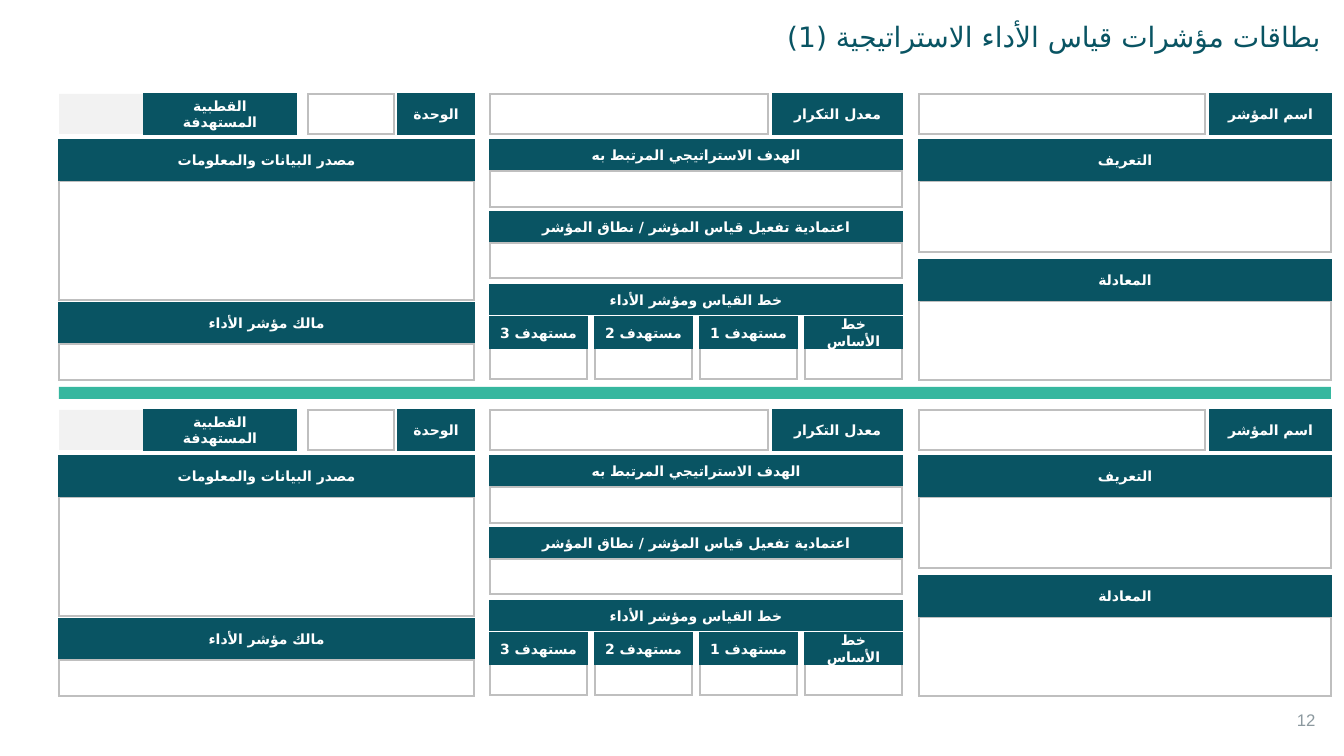
from lxml import etree
from pptx import Presentation
from pptx.dml.color import RGBColor
from pptx.enum.shapes import MSO_SHAPE
from pptx.enum.text import MSO_ANCHOR, PP_ALIGN
from pptx.oxml.ns import qn
from pptx.util import Pt

RECT = MSO_SHAPE.RECTANGLE
TOP, MIDDLE = MSO_ANCHOR.TOP, MSO_ANCHOR.MIDDLE
LEFT, CENTER, RIGHT = PP_ALIGN.LEFT, PP_ALIGN.CENTER, PP_ALIGN.RIGHT

PX = 914400 / 100.8
ARABIC_FONT = "DejaVu Sans"
COLORS = {
    "teal": "095463", "white": "FFFFFF", "border": "BFBFBF",
    "pale": "F2F2F2", "divider": "36B79F", "number": "8C999F",
}

TITLE = "بطاقات مؤشرات قياس الأداء الاستراتيجية (1)"
PAGE = "12"
CARD_TOPS = [94, 410]
HEAD_ROW = 40
DIVIDER = (59, 387, 1272, 12)

HEAD_LABELS = [
    ("اسم المؤشر", 1210, 121),
    ("معدل التكرار", 773, 129),
    ("الوحدة", 398, 76),
    ("القطبية المستهدفة", 144, 152),
]
HEAD_FIELDS = [(919, 286), (490, 278), (308, 86)]
POLARITY_FIELD = (59, 84)

COLUMNS = [
    (919, 412, [
        ("التعريف", 46, 40, 87, 71),
        ("المعادلة", 166, 40, 207, 79),
    ]),
    (490, 412, [
        ("الهدف الاستراتيجي المرتبط به", 46, 29, 77, 36),
        ("اعتمادية تفعيل قياس المؤشر / نطاق المؤشر", 118, 29, 149, 35),
        ("خط القياس ومؤشر الأداء", 191, 29, None, None),
    ]),
    (59, 415, [
        ("مصدر البيانات والمعلومات", 46, 40, 87, 119),
        ("مالك مؤشر الأداء", 209, 39, 250, 36),
    ]),
]

TARGETS = ["مستهدف 3", "مستهدف 2", "مستهدف 1", "خط الأساس"]
TARGET_LEFT, TARGET_STEP, TARGET_WIDTH = 490, 105, 97
TARGET_TOP, TARGET_HEIGHT = 223, 31


def emu(*lengths):
    return [round(length * PX) for length in lengths]


def color(name):
    return RGBColor.from_string(COLORS[name])


def write(frame, words, size, font, ink, align, anchor, bold=False, rtl=True):
    frame.word_wrap = True
    frame.vertical_anchor = anchor
    paragraph = frame.paragraphs[0]
    paragraph.alignment = align
    run = paragraph.add_run()
    run.text = words
    run.font.size = Pt(size)
    run.font.bold = bold
    run.font.name = font
    run.font.color.rgb = color(ink)
    if rtl:
        paragraph._p.get_or_add_pPr().set("rtl", "1")
        props = run._r.get_or_add_rPr()
        props.set("lang", "ar-SA")
        etree.SubElement(props, qn("a:cs")).set("typeface", ARABIC_FONT)


def block(box, fill, line=None):
    rect = slide.shapes.add_shape(RECT, *emu(*box))
    rect.shadow.inherit = False
    rect.fill.solid()
    rect.fill.fore_color.rgb = color(fill)
    if line:
        rect.line.color.rgb = color(line)
        rect.line.width = Pt(1)
        etree.SubElement(rect.line._get_or_add_ln(), qn("a:miter")).set("lim", "800000")
    else:
        rect.line.fill.background()
    return rect


def field(*box):
    block(box, "white", "border")


def heading(words, *box):
    rect = block(box, "teal", "teal")
    write(rect.text_frame, words, 10, "Karla", "white", CENTER, MIDDLE, bold=True)


def card(top):
    for left, width in HEAD_FIELDS:
        field(left, top, width, HEAD_ROW)
    left, width = POLARITY_FIELD
    block((left, top, width, HEAD_ROW), "pale")
    for words, left, width in HEAD_LABELS:
        heading(words, left, top, width, HEAD_ROW)

    for left, width, sections in COLUMNS:
        for words, label_y, label_h, field_y, field_h in sections:
            if field_h:
                field(left, top + field_y, width, field_h)
            heading(words, left, top + label_y, width, label_h)

    for i, words in enumerate(TARGETS):
        left = TARGET_LEFT + i * TARGET_STEP
        y = top + TARGET_TOP
        field(left, y + TARGET_HEIGHT, TARGET_WIDTH, TARGET_HEIGHT)
        heading(words, left, y, TARGET_WIDTH, TARGET_HEIGHT)


prs = Presentation()
prs.slide_width, prs.slide_height = emu(1344, 756)
slide = prs.slides.add_slide(prs.slide_layouts[5])

title = slide.shapes.title
title.left, title.top, title.width, title.height = emu(69, 14, 1262, 62)
write(title.text_frame, TITLE, 20, "Arial", "teal", RIGHT, TOP)

page = slide.shapes.add_textbox(*emu(1287, 705, 44, 40))
write(page.text_frame, PAGE, 12, "Arial", "number", LEFT, TOP, rtl=False)

for card_top in CARD_TOPS:
    card(card_top)
block(DIVIDER, "divider")

prs.save("out.pptx")
